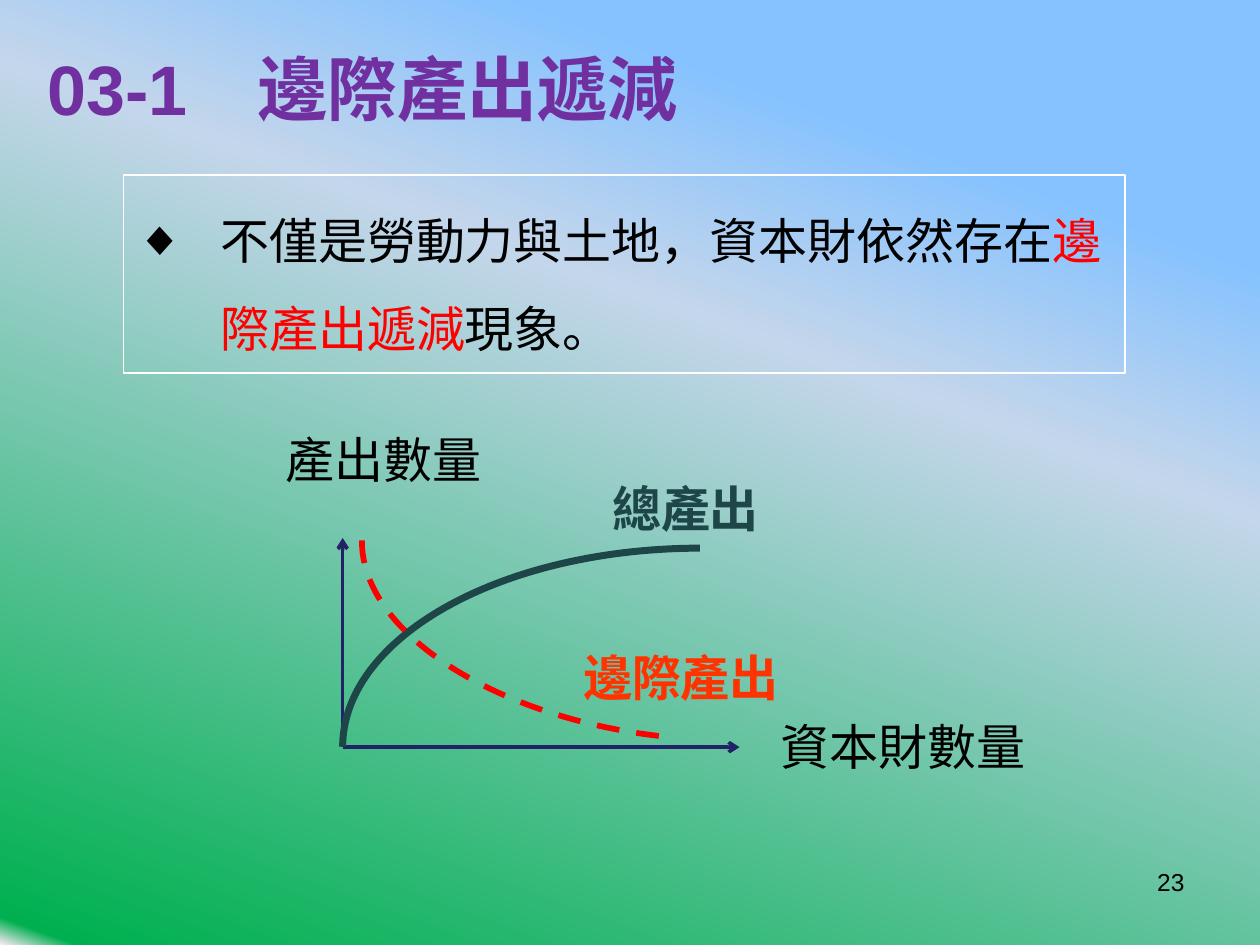
import pptx
import pptx.util
import pptx.dml.color
import pptx.enum.dml
import pptx.enum.shapes
import pptx.enum.text
import pptx.oxml.ns
from lxml import etree

Inches = pptx.util.Inches
Pt = pptx.util.Pt
qn = pptx.oxml.ns.qn
SHAPE = pptx.enum.shapes.MSO_SHAPE
ALIGN = pptx.enum.text.PP_ALIGN
ANCHOR = pptx.enum.text.MSO_ANCHOR
SIZING = pptx.enum.text.MSO_AUTO_SIZE
COLORS = {
    "purple": "7030A0", "black": "000000", "red": "FF0000",
    "orange": "FF3300", "teal": "1E4649", "navy": "222267",
    "white": "FFFFFF", "sky": "85C2FF", "mist": "C4D6EB",
    "green": "00B050", "blush": "FFEBFA",
}


def tint(name):
    return pptx.dml.color.RGBColor.from_string(COLORS[name])


def place(shape, box):
    shape.left, shape.top, shape.width, shape.height = map(Inches, box)


def write(frame, *parts, size=28, bold=False, align=ALIGN.LEFT,
          wrap=True, sizing=SIZING.NONE):
    frame.word_wrap = wrap
    frame.auto_size = sizing
    para = frame.paragraphs[0]
    para.alignment = align
    for words, color in parts:
        run = para.add_run()
        run.text = words
        run.font.name = "Arial"
        run.font.size = Pt(size)
        run.font.bold = bold
        run.font.color.rgb = tint(color)
    return para


def paint(slide):
    fill = slide.background.fill
    fill.gradient()
    fill.gradient_angle = 250
    stops = next(slide.element.iter(qn("a:gsLst")))
    for stop in list(stops):
        stops.remove(stop)
    for pos, name in ((19, "sky"), (37, "mist"), (98, "green"), (100, "blush")):
        stop = etree.SubElement(stops, qn("a:gs"), pos=str(pos * 1000))
        etree.SubElement(stop, qn("a:srgbClr"), val=COLORS[name])


def head(slide, box):
    title = slide.shapes.title
    place(title, box)
    title.text_frame.vertical_anchor = ANCHOR.MIDDLE
    write(title.text_frame, ("03-1　邊際產出遞減", "purple"), size=40, bold=True)


def point(slide, box):
    shape = slide.shapes.add_textbox(*map(Inches, box))
    shape.line.color.rgb = tint("white")
    shape.line.width = Pt(1)
    para = write(shape.text_frame,
                 ("不僅是勞動力與土地，資本財依然存在", "black"),
                 ("邊際產出遞減", "red"), ("現象。", "black"))
    para.line_spacing = 1.5
    para.space_before = Pt(5.6)
    props = para._p.get_or_add_pPr()
    props.set("marL", str(Inches(0.67)))
    props.set("indent", str(-Inches(0.67)))
    etree.SubElement(props, qn("a:buFont"), typeface="Arial")
    etree.SubElement(props, qn("a:buChar"), char="◆")


def label(slide, box, words, color, bold=False):
    shape = slide.shapes.add_textbox(*map(Inches, box))
    write(shape.text_frame, (words, color), bold=bold, wrap=False,
          sizing=SIZING.SHAPE_TO_FIT_TEXT)


def axis(slide, start, end):
    kind = pptx.enum.shapes.MSO_CONNECTOR.STRAIGHT
    line = slide.shapes.add_connector(kind, *map(Inches, start + end))
    line.line.color.rgb = tint("navy")
    line.line.width = Pt(2)
    etree.SubElement(line.line._get_or_add_ln(), qn("a:tailEnd"), type="arrow")
    etree.SubElement(line._element.spPr, qn("a:effectLst"))


def curve(slide, box, turn, color, width, dash=None):
    arc = slide.shapes.add_shape(SHAPE.ARC, *map(Inches, box))
    arc.shadow.inherit = False
    arc.rotation = turn
    arc.fill.background()
    arc.line.color.rgb = tint(color)
    arc.line.width = Pt(width)
    if dash:
        arc.line.dash_style = dash


def graph(slide, box):
    left, top, width, height = box
    base = top + height
    axis(slide, (left, base), (left, top))
    axis(slide, (left, base), (left + width, base))
    curve(slide, (left + 1.26, top - 1.18, 3.15, 5.67), 270, "teal", 4)
    curve(slide, (left + 0.14, top - 1.1, 5.05, 2.68), 186.7, "red", 3.25,
          pptx.enum.dml.MSO_LINE.DASH)
    for x, y, wide, words, color, bold in (
            (3.38, 1.37, 2.17, "資本財數量", "black", False),
            (-0.55, -0.91, 1.77, "產出數量", "black", False),
            (1.81, 0.82, 1.77, "邊際產出", "orange", True),
            (2.04, -0.52, 1.38, "總產出", "teal", True)):
        label(slide, (left + x, top + y, wide, 0.57), words, color, bold)


def foot(slide, box):
    shape = slide.shapes.add_textbox(*map(Inches, box))
    write(shape.text_frame, ("23", "black"), size=14, align=ALIGN.RIGHT)


def main():
    deck = pptx.Presentation()
    deck.slide_width = Inches(10)
    deck.slide_height = Inches(7.5)
    slide = deck.slides.add_slide(deck.slide_layouts[5])
    paint(slide)
    head(slide, (0.28, 0, 8.28, 1.39))
    point(slide, (0.98, 1.39, 7.95, 1.57))
    graph(slide, (2.72, 4.27, 3.15, 1.66))
    foot(slide, (7.17, 6.83, 2.33, 0.52))
    deck.save("out.pptx")


if __name__ == "__main__":
    main()
